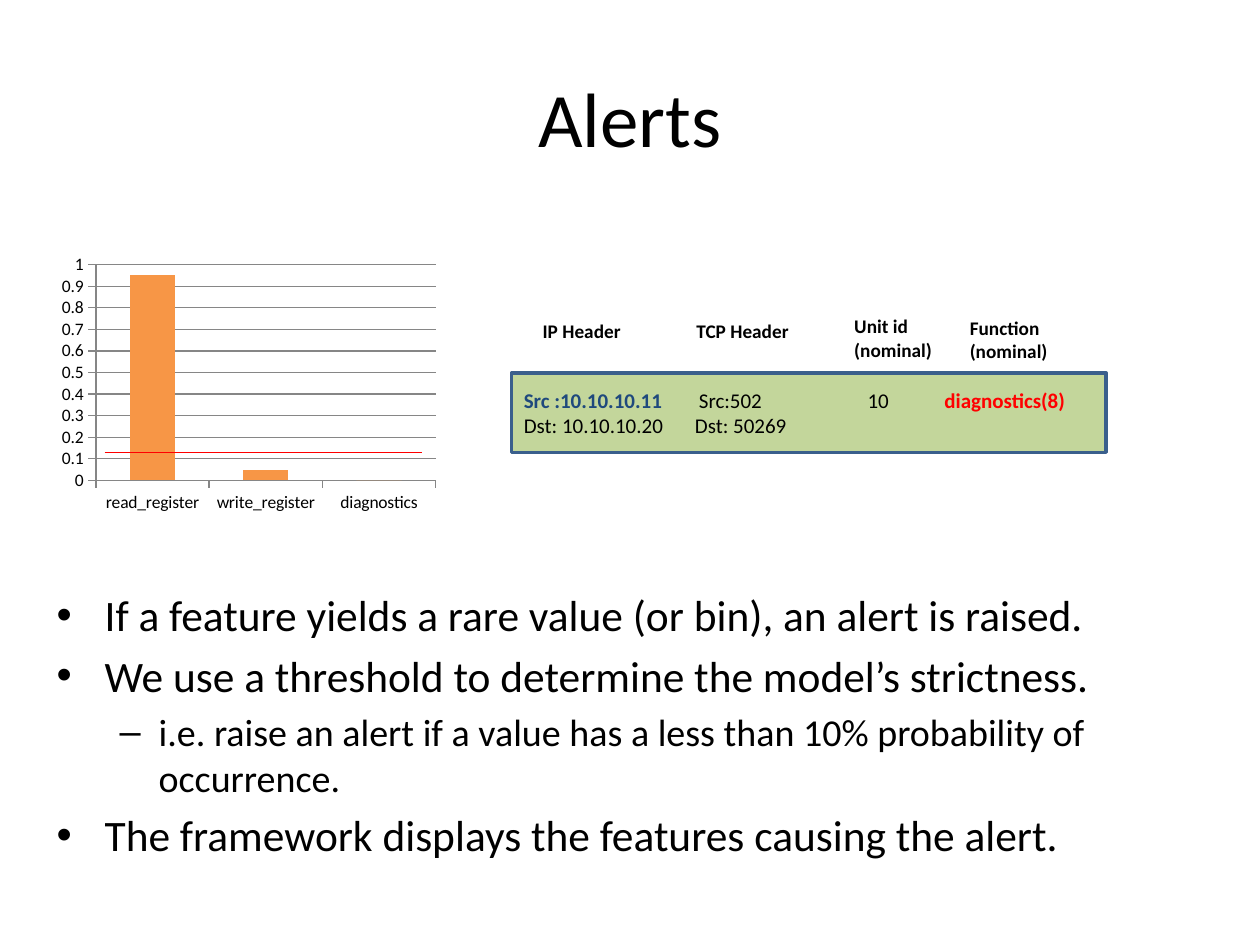
from dataclasses import dataclass

from lxml.etree import SubElement
from pptx import Presentation
from pptx.chart.data import CategoryChartData as ChartData
from pptx.dml.color import RGBColor as Color
from pptx.enum.chart import XL_CHART_TYPE as ChartType, XL_TICK_MARK as Tick
from pptx.enum.shapes import MSO_CONNECTOR as Connector, MSO_SHAPE as Shape
from pptx.enum.text import MSO_ANCHOR as Anchor, PP_ALIGN as Align
from pptx.oxml.ns import qn
from pptx.util import Cm, Pt


@dataclass(frozen=True)
class Theme:
    """Colours and type sizes of the slide."""

    font: str = "Calibri"
    ink: str = "000000"
    navy: str = "1F497D"
    alert: str = "FF0000"
    bar: str = "F79646"
    grid: str = "868686"
    packet: str = "C3D69B"
    border: str = "3A5F8C"
    title: float = 44
    bullet: float = 24.8
    sub_bullet: float = 21.7
    packet_text: float = 12
    label: float = 11
    chart_text: float = 10


THEME = Theme()
BULLETS = [
    (0, "If a feature yields a rare value (or bin), an alert is raised."),
    (0, "We use a threshold to determine the model’s strictness."),
    (1, "i.e. raise an alert if a value has a less than 10% probability of occurrence."),
    (0, "The framework displays the features causing the alert."),
]
LEVELS = [
    ("•", THEME.bullet, 0.97, -0.97),
    ("–", THEME.sub_bullet, 2.06, -0.79),
]
HEADERS = [
    ("IP Header", 10.69, 6.32, 2.08, 1.19),
    ("TCP Header", 13.79, 6.32, 2.39, 1.19),
    ("Unit id\n(nominal)", 16.97, 6.22, 2.08, 1.68),
    ("Function\n(nominal)", 19.3, 6.25, 2.08, 1.68),
]
PACKET_ROWS = [
    (
        [3.53, 6.93, 8.48],
        [
            ("Src :10.10.10.11", THEME.navy, True),
            ("\tSrc:502\t10\t", THEME.ink, False),
            ("diagnostics(8)", THEME.alert, True),
        ],
    ),
    ([3.45], [("Dst: 10.10.10.20\tDst: 50269", THEME.ink, False)]),
]


def style_font(font, size, color=THEME.ink, bold=False):
    """Apply the theme typeface with a size, colour and weight."""
    font.name = THEME.font
    font.size = Pt(size)
    font.bold = bold
    font.color.rgb = Color.from_string(color)


def style_line(line, color, width):
    """Give a line its colour and width in points."""
    line.color.rgb = Color.from_string(color)
    line.width = Pt(width)


def add_text(page, text, frame, size, bold=False, wrap=True):
    """Add a text box with one uniform text style."""
    box = page.shapes.add_textbox(*map(Cm, frame))
    box.text_frame.word_wrap = wrap
    box.text_frame.text = text
    for para in box.text_frame.paragraphs:
        for span in para.runs:
            style_font(span.font, size, bold=bold)
    return box


def add_title(page, text):
    """Add the centred slide title."""
    box = add_text(page, text, (1.27, 0.76, 22.86, 3.18), THEME.title)
    box.text_frame.vertical_anchor = Anchor.MIDDLE
    box.text_frame.paragraphs[0].alignment = Align.CENTER


def add_bullets(page, items):
    """Add the two-level bullet list."""
    text = "\n".join(text for _, text in items)
    box = add_text(page, text, (0.89, 11.73, 22.17, 5.28), THEME.bullet)
    for para, (level, _) in zip(box.text_frame.paragraphs, items):
        mark, size, margin, indent = LEVELS[level]
        para.level = level
        para.space_before = Pt(round(size * 0.2, 1))
        para.runs[0].font.size = Pt(size)
        properties = para._p.get_or_add_pPr()
        properties.set("marL", str(Cm(margin)))
        properties.set("indent", str(Cm(indent)))
        SubElement(properties, qn("a:buFont"), typeface="Arial")
        SubElement(properties, qn("a:buChar"), char=mark)


def add_frequency_chart(page):
    """Add the column chart of function frequencies."""
    data = ChartData()
    data.categories = ["read_register", "write_register", "diagnostics"]
    data.add_series("Series 1", [0.95, 0.05, 0])
    frame = map(Cm, (1.09, 5.03, 7.85, 5.41))
    chart = page.shapes.add_chart(ChartType.COLUMN_CLUSTERED, *frame, data).chart
    chart.has_legend = False
    chart.has_title = False
    style_font(chart.font, THEME.chart_text)
    plot = chart.plots[0]
    plot.gap_width = 150
    plot.vary_by_categories = False
    fill = plot.series[0].format.fill
    fill.solid()
    fill.fore_color.rgb = Color.from_string(THEME.bar)
    scale = chart.value_axis
    scale.minimum_scale, scale.maximum_scale, scale.major_unit = 0, 1, 0.1
    scale.has_major_gridlines = True
    style_line(scale.major_gridlines.format.line, THEME.grid, 0.75)
    for axis in (scale, chart.category_axis):
        axis.major_tick_mark = Tick.OUTSIDE
        style_line(axis.format.line, THEME.grid, 0.75)


def add_threshold(page):
    """Add the horizontal alert threshold across the chart."""
    ends = map(Cm, (2.11, 9.12, 8.51, 9.12))
    rule = page.shapes.add_connector(Connector.STRAIGHT, *ends)
    style_line(rule.line, THEME.alert, 0.75)
    SubElement(rule._element.spPr, qn("a:effectLst"))


def add_packet(page, rows):
    """Add the packet box with its fields aligned on tab stops."""
    frame = map(Cm, (10.31, 7.52, 11.99, 1.6))
    box = page.shapes.add_shape(Shape.RECTANGLE, *frame)
    box.shadow.inherit = False
    box.fill.solid()
    box.fill.fore_color.rgb = Color.from_string(THEME.packet)
    style_line(box.line, THEME.border, 2)
    body = box.text_frame
    body.word_wrap = True
    body.vertical_anchor = Anchor.MIDDLE
    body.text = "\n" * (len(rows) - 1)
    for para, (stops, spans) in zip(body.paragraphs, rows):
        para.alignment = Align.LEFT
        tabs = SubElement(para._p.get_or_add_pPr(), qn("a:tabLst"))
        for stop in stops:
            SubElement(tabs, qn("a:tab"), pos=str(Cm(stop)), algn="l")
        for text, color, bold in spans:
            span = para.add_run()
            span.text = text
            style_font(span.font, THEME.packet_text, color, bold)


def main():
    """Build and save the slide."""
    deck = Presentation()
    deck.slide_width, deck.slide_height = Cm(25.4), Cm(19.05)
    page = deck.slides.add_slide(deck.slide_layouts[6])
    add_title(page, "Alerts")
    add_bullets(page, BULLETS)
    add_frequency_chart(page)
    add_threshold(page)
    add_packet(page, PACKET_ROWS)
    for text, *frame in HEADERS:
        add_text(page, text, frame, THEME.label, bold=True, wrap=False)
    deck.save("out.pptx")


if __name__ == "__main__":
    main()
